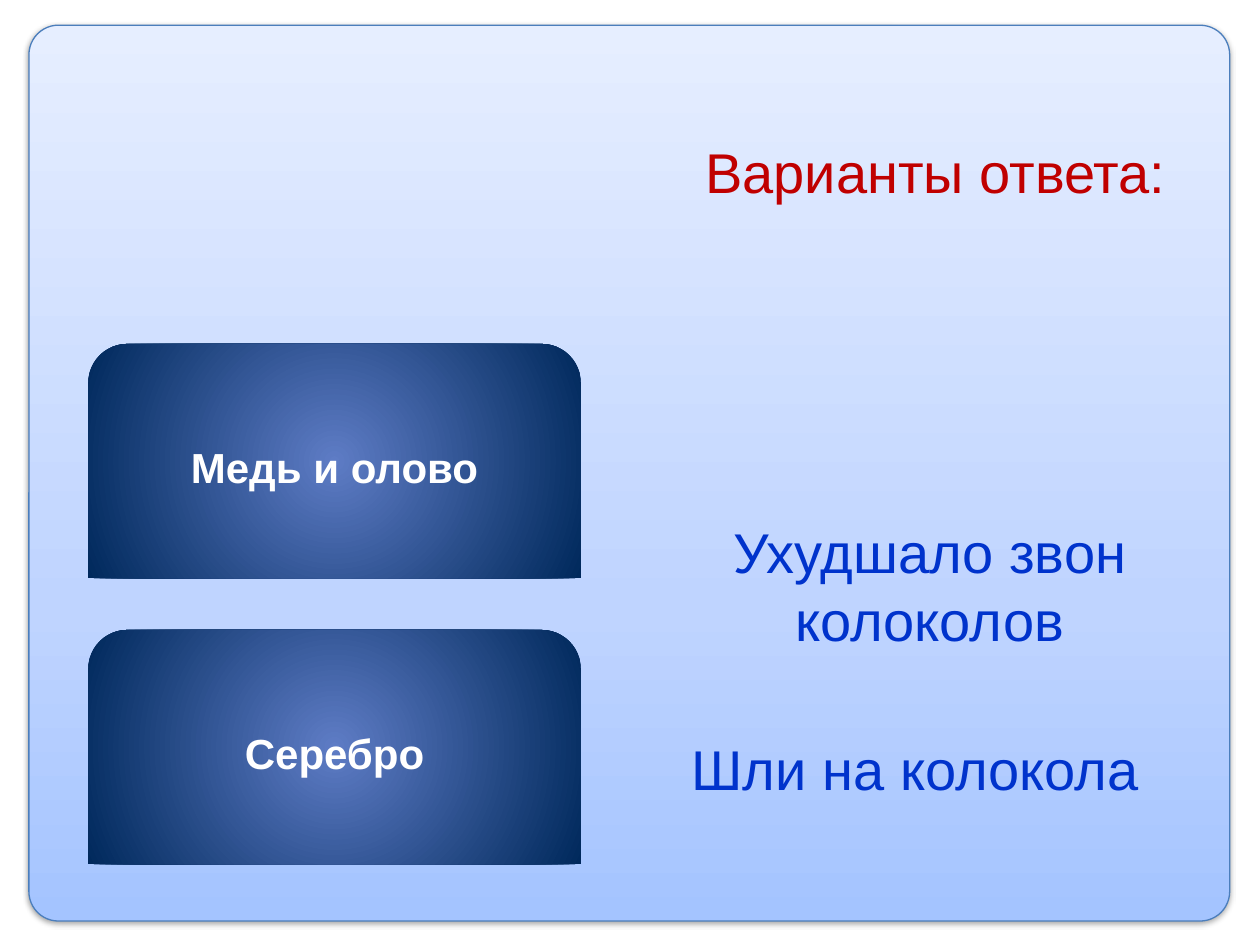
from lxml import etree
from pptx import Presentation
from pptx.dml.color import RGBColor as RGB
from pptx.enum.shapes import MSO_SHAPE as SHAPE
from pptx.enum.text import MSO_ANCHOR as ANCHOR, MSO_AUTO_SIZE as AUTO, PP_ALIGN as ALIGN
from pptx.oxml import parse_xml
from pptx.oxml.ns import nsdecls
from pptx.util import Pt

# Content; boxes are left, top, width, height in points
TITLE = ("Варианты ответа:", (365.76, 61.92, 337.68, 72))
CARDS = ["Медь и олово", "Серебро"]
NOTES = [
    ("Ухудшало звон колоколов", (388.08, 281.52, 286.56, 105.84)),
    ("Шли на колокола", (382.32, 393.84, 281.52, 90)),
]
PANEL = (16.56, 14.4, 686.16, 511.92)
CARD = (50.4, 196.56, 281.52, 133.92)
STEP = 163.44  # from one card's top to the next

COLORS = {"title": "C00000", "note": "0033CC", "card": "FFFFFF", "edge": "4B7EBC"}
SKY = [(0, "A4C4FF"), (35, "BFD4FF"), (100, "E6EEFF")]
NAVY = [(0, "5E7CC5"), (100, "00295C")]
UP = '<a:lin ang="16200000" scaled="0"/>'
ROUND = ('<a:path path="circle"><a:fillToRect l="50000" t="50000" '
         'r="50000" b="50000"/></a:path>')
SHADE = (f'<a:effectLst {nsdecls("a")}><a:outerShdw blurRad="{Pt(3.1)}" '
         f'dist="{Pt(1.6)}" dir="5400000" rotWithShape="0">'
         '<a:srgbClr val="000000"><a:alpha val="38000"/></a:srgbClr>'
         '</a:outerShdw></a:effectLst>')

FONTS = {
    "title": {"name": "Arial", "size": Pt(32), "bold": False},
    "note": {"name": "Arial", "size": Pt(32), "bold": False},
    "card": {"name": "Arial", "size": Pt(24), "bold": True},
}
FRAME = {"word_wrap": True, "auto_size": AUTO.NONE, "vertical_anchor": ANCHOR.MIDDLE}


def apply(item, values):
    for key, value in values.items():
        setattr(item, key, value)


def place(shape, box):
    apply(shape, dict(zip(("left", "top", "width", "height"), map(Pt, box))))


def write(shape, text, role):
    frame = shape.text_frame
    apply(frame, FRAME)
    para = frame.paragraphs[0]
    para.alignment = ALIGN.CENTER
    run = para.add_run()
    run.text = text
    apply(run.font, FONTS[role])
    run.font.color.rgb = RGB.from_string(COLORS[role])


def shade(shape, stops, path):
    """Fill a shape with a gradient."""
    shape.fill.solid()
    old = shape.element.spPr.find("{*}solidFill")
    marks = "".join(f'<a:gs pos="{pos * 1000}"><a:srgbClr val="{color}"/></a:gs>'
                    for pos, color in stops)
    new = parse_xml(f'<a:gradFill {nsdecls("a")} rotWithShape="1">'
                    f'<a:gsLst>{marks}</a:gsLst>{path}</a:gradFill>')
    old.getparent().replace(old, new)


def main():
    deck = Presentation()
    deck.slide_width, deck.slide_height = Pt(720), Pt(540)
    slide = deck.slides.add_slide(deck.slide_layouts[5])
    shapes = slide.shapes

    # Background panel
    panel = shapes.add_shape(SHAPE.ROUNDED_RECTANGLE, *map(Pt, PANEL))
    panel.adjustments[0] = 0.033
    shade(panel, SKY, UP)
    panel.line.color.rgb = RGB.from_string(COLORS["edge"])
    panel.line.width = Pt(0.75)
    panel.element.spPr.append(parse_xml(SHADE))

    # Answer cards
    left, top, width, height = CARD
    for row, text in enumerate(CARDS):
        box = (left, top + row * STEP, width, height)
        card = shapes.add_shape(SHAPE.ROUND_2_SAME_RECTANGLE, *map(Pt, box))
        shade(card, NAVY, ROUND)
        card.line.fill.background()
        card.shadow.inherit = False
        write(card, text, "card")

    # Notes beside the cards
    for text, box in NOTES:
        write(shapes.add_textbox(*map(Pt, box)), text, "note")

    # Title, brought in front of the panel
    text, box = TITLE
    title = shapes.title
    place(title, box)
    write(title, text, "title")
    title.element.getparent().append(title.element)

    deck.save("out.pptx")


if __name__ == "__main__":
    main()
